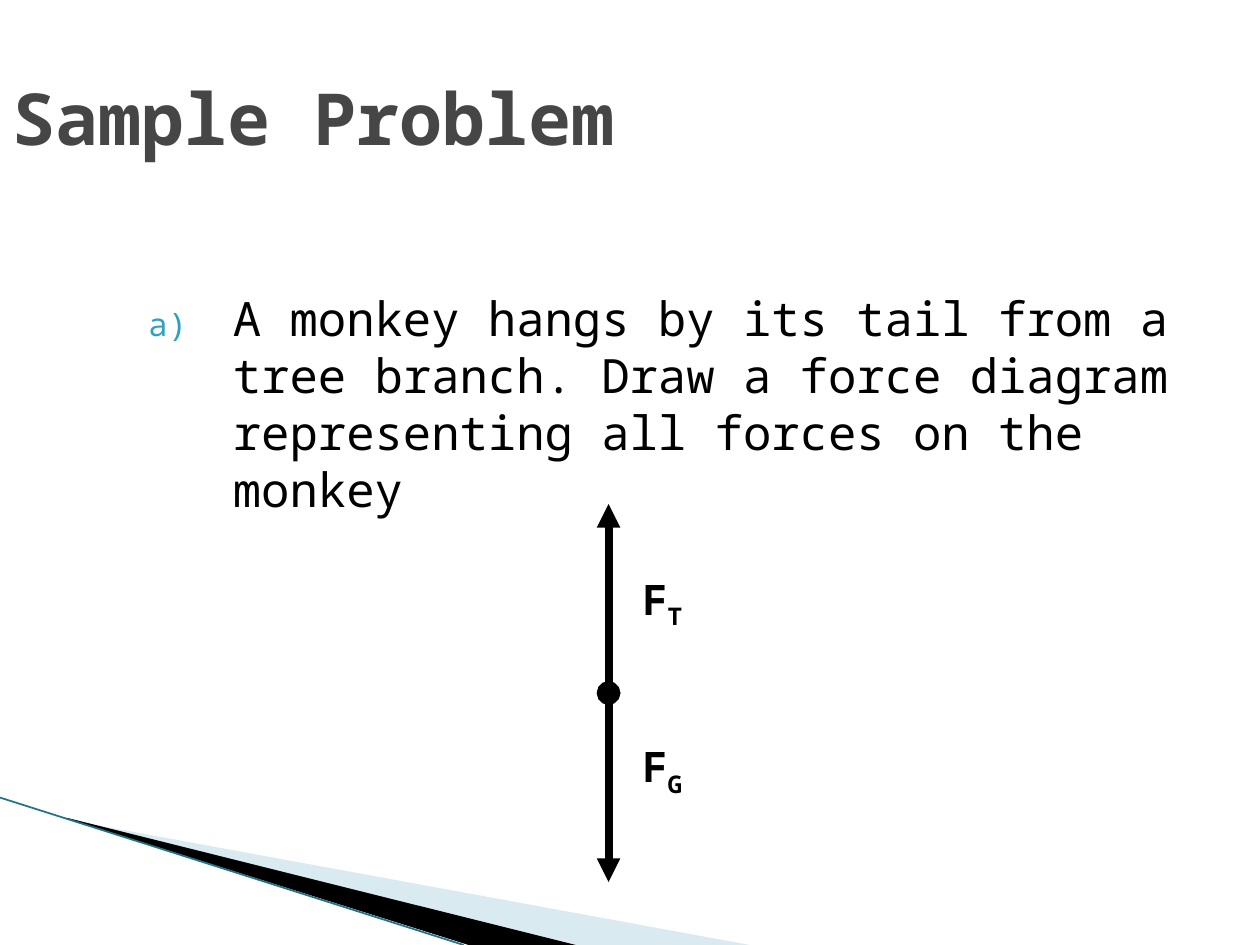
from lxml import etree
from pptx import Presentation
from pptx.dml.color import RGBColor
from pptx.enum.shapes import MSO_CONNECTOR
from pptx.enum.text import MSO_ANCHOR, MSO_AUTO_SIZE
from pptx.oxml.ns import qn
from pptx.util import Inches, Pt

STRAIGHT = MSO_CONNECTOR.STRAIGHT
TOP, MIDDLE = MSO_ANCHOR.TOP, MSO_ANCHOR.MIDDLE
FIT_SHAPE = MSO_AUTO_SIZE.SHAPE_TO_FIT_TEXT

FONT = "Noto Sans Mono"
BLACK = RGBColor(0x00, 0x00, 0x00)
GREY = RGBColor(0x46, 0x46, 0x46)
PALE_BLUE = RGBColor(0xA0, 0xCB, 0xDC)
DARK_TEAL = RGBColor(0x1F, 0x74, 0x88)

BODY_X, BODY_Y = 4.83, 5.5
FORCE_LENGTH = 1.5


def add_element(parent, tag, **attributes):
    return etree.SubElement(parent, qn(tag), attributes)


def add_wedge(slide, points, color, opacity=100):
    corners = [(Inches(x), Inches(y)) for x, y in points]
    builder = slide.shapes.build_freeform(*corners[0], scale=1.0)
    builder.add_line_segments(corners[1:], close=True)
    wedge = builder.convert_to_shape()
    wedge.shadow.inherit = False
    wedge.line.fill.background()
    wedge.fill.solid()
    wedge.fill.fore_color.rgb = color
    if opacity < 100:
        solid = wedge._element.spPr.find(qn("a:solidFill"))
        add_element(solid[0], "a:alpha", val=str(opacity * 1000))


def add_line(slide, start, end, color, width):
    line = slide.shapes.add_connector(
        STRAIGHT, *(Inches(value) for value in (*start, *end)))
    line.line.color.rgb = color
    line.line.width = Pt(width)
    add_element(line._element.spPr, "a:effectLst")
    return line


def add_box(slide, left, top, width, height, anchor=TOP, wrap=True):
    box = slide.shapes.add_textbox(
        Inches(left), Inches(top), Inches(width), Inches(height))
    box.text_frame.word_wrap = wrap
    box.text_frame.vertical_anchor = anchor
    return box.text_frame


def add_span(para, text, size, color=BLACK, bold=False):
    span = para.add_run()
    span.text = text
    span.font.name = FONT
    span.font.size = Pt(size)
    span.font.bold = bold
    span.font.color.rgb = color
    return span


def add_letter_numbering(para):
    """Number the paragraph a), b), ... with a hanging indent."""
    indent = Inches(0.67)
    properties = para._p.get_or_add_pPr()
    properties.set("marL", str(indent))
    properties.set("indent", str(-indent))
    color = add_element(properties, "a:buClr")
    add_element(color, "a:srgbClr", val="2DA2BF")
    add_element(properties, "a:buSzPct", val="68000")
    add_element(properties, "a:buFont", typeface=FONT)
    add_element(properties, "a:buAutoNum", type="alphaLcParenR")


def add_force(slide, direction, subscript, label_top):
    """Draw a force arrow from the body; direction is -1 for up, 1 for down."""
    tip = (BODY_X, BODY_Y + direction * FORCE_LENGTH)
    arrow = add_line(slide, (BODY_X, BODY_Y), tip, BLACK, 4.5)
    outline = arrow.line._get_or_add_ln()
    add_element(outline, "a:headEnd", type="oval")
    add_element(outline, "a:tailEnd", type="triangle")

    label = add_box(slide, 5, label_top, 0.56, 0.5, wrap=False)
    label.auto_size = FIT_SHAPE
    para = label.paragraphs[0]
    add_span(para, "F", 24, bold=True)
    lowered = add_span(para, subscript, 24, bold=True)
    lowered.font._element.set("baseline", "-25000")


def add_corner_decoration(slide):
    add_wedge(slide, [(0.55, 6.51), (5.95, 7.5), (4.56, 7.5), (0.55, 6.5)],
              PALE_BLUE, opacity=40)
    add_wedge(slide, [(0.53, 6.49), (4.57, 7.5), (3.72, 7.5), (0.54, 6.5)], BLACK)
    add_line(slide, (0, 6.33), (3.68, 7.5), DARK_TEAL, 1)


def main():
    deck = Presentation()
    deck.slide_width, deck.slide_height = Inches(10), Inches(7.5)
    page = deck.slides.add_slide(deck.slide_layouts[6])

    add_corner_decoration(page)

    title = add_box(page, 0, 0.3, 9, 1.25, anchor=MIDDLE)
    add_span(title.paragraphs[0], "Sample Problem", 41, GREY, bold=True)

    problem = add_box(page, 1.08, 2.25, 8.92, 4.5).paragraphs[0]
    add_letter_numbering(problem)
    add_span(problem, "A monkey hangs by its tail from a tree branch. "
             "Draw a force diagram representing all forces on the monkey", 27)

    add_force(page, -1, "T", 4.5)
    add_force(page, 1, "G", 5.83)

    deck.save("out.pptx")


if __name__ == "__main__":
    main()
